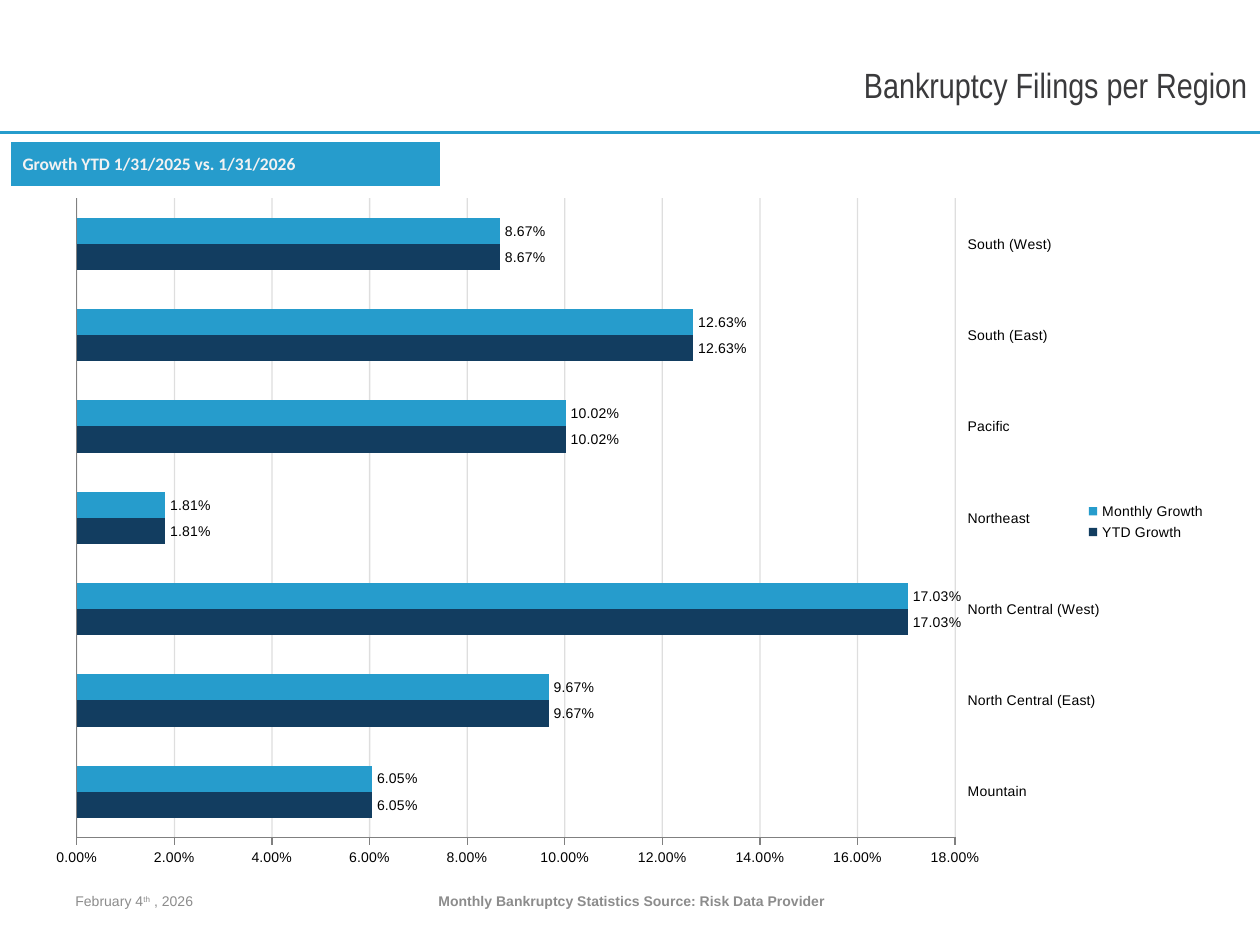
from dataclasses import dataclass

from lxml.etree import SubElement
from pptx import Presentation
from pptx.chart.data import CategoryChartData
from pptx.dml.color import RGBColor
from pptx.enum.chart import (
    XL_CHART_TYPE as ChartType,
    XL_LABEL_POSITION as LabelPos,
    XL_LEGEND_POSITION as LegendPos,
    XL_TICK_LABEL_POSITION as TickLabelPos,
    XL_TICK_MARK as TickMark,
)
from pptx.enum.shapes import MSO_CONNECTOR as Connector
from pptx.enum.text import MSO_ANCHOR as Anchor, PP_ALIGN as Align
from pptx.oxml import parse_xml
from pptx.oxml.ns import nsdecls, qn
from pptx.util import Cm, Pt

COLORS = {
    "blue": "269CCC",
    "navy": "123D60",
    "white": "FFFFFF",
    "off_white": "F2F2F2",
    "title": "3A3A3C",
    "footer": "8C8C8C",
    "axis": "808080",
    "black": "000000",
}
REGIONS = [
    "Mountain", "North Central (East)", "North Central (West)", "Northeast",
    "Pacific", "South (East)", "South (West)",
]
GROWTH = [0.0605, 0.0967, 0.1703, 0.0181, 0.1002, 0.1263, 0.0867]
PERCENT = "0.00%"


@dataclass
class Series:
    name: str
    values: list[float]
    color: str


@dataclass
class Box:
    left: float
    top: float
    width: float
    height: float

    def lengths(self) -> list[Cm]:
        return [Cm(v) for v in (self.left, self.top, self.width, self.height)]


SERIES = [
    Series("YTD Growth", GROWTH, "navy"),
    Series("Monthly Growth", GROWTH, "blue"),
]


def rgb(name: str) -> RGBColor:
    return RGBColor.from_string(COLORS[name])


def set_font(font, size: float, color: str, name: str = "Arial", bold: bool = False) -> None:
    font.size = Pt(size)
    font.name = name
    font.bold = bold
    font.color.rgb = rgb(color)


def write(p, text: str, *, size: float = 8, color: str = "footer", name: str = "Arial",
          bold: bool = False, align: Align = Align.LEFT, baseline: int = 0) -> None:
    p.alignment = align
    r = p.add_run()
    r.text = text
    set_font(r.font, size, color, name, bold)
    if baseline:
        r._r.get_or_add_rPr().set("baseline", str(baseline * 1000))


def add_box(s, box: Box):
    tf = s.shapes.add_textbox(*box.lengths()).text_frame
    tf.word_wrap = True
    tf.vertical_anchor = Anchor.MIDDLE
    return tf.paragraphs[0]


def white_fill(alpha: int):
    return parse_xml(
        f'<c:spPr {nsdecls("c", "a")}><a:solidFill><a:srgbClr val="{COLORS["white"]}">'
        f'<a:alpha val="{alpha * 1000}"/></a:srgbClr></a:solidFill>'
        "<a:ln><a:noFill/></a:ln></c:spPr>"
    )


def set_line(line, color: str, width: float) -> None:
    line.color.rgb = rgb(color)
    line.width = Pt(width)


def add_rule(s) -> None:
    rule = s.shapes.add_connector(Connector.STRAIGHT, Cm(0), Cm(2.67), Cm(25.4), Cm(2.67))
    set_line(rule.line, "blue", 1.5)
    SubElement(rule._element.spPr, qn("a:effectLst"))


def style_axes(chart) -> None:
    cat, val = chart.category_axis, chart.value_axis
    cat.major_tick_mark = TickMark.NONE
    cat.tick_label_position = TickLabelPos.HIGH
    cat.has_major_gridlines = False
    val.major_tick_mark = TickMark.OUTSIDE
    val.minimum_scale, val.maximum_scale, val.major_unit = 0, 0.18, 0.02
    val.tick_labels.number_format = PERCENT
    val.tick_labels.number_format_is_linked = False
    for axis in (cat, val):
        set_line(axis.format.line, "axis", 0.75)
    val.has_major_gridlines = True
    grid = val.major_gridlines
    set_line(grid.format.line, "axis", 0.75)
    for clr in grid._xAx.find(qn("c:majorGridlines")).iter(qn("a:srgbClr")):
        SubElement(clr, qn("a:alpha")).set("val", "25000")


def place_plot(chart) -> None:
    area = chart._chartSpace.chart.plotArea
    old = area.find(qn("c:layout"))
    if old is not None:
        area.remove(old)
    places = {"x": 0.038, "y": 0.028, "w": 0.74, "h": 0.933}
    modes = "".join(f'<c:{k}Mode val="edge"/>' for k in "xy")
    sizes = "".join(f'<c:{k} val="{v}"/>' for k, v in places.items())
    area.insert(0, parse_xml(
        f'<c:layout {nsdecls("c")}><c:manualLayout><c:layoutTarget val="inner"/>'
        f"{modes}{sizes}</c:manualLayout></c:layout>"
    ))
    area.append(white_fill(50))
    chart._chartSpace.chart.addnext(white_fill(90))


def add_growth_chart(s, box: Box) -> None:
    data = CategoryChartData(number_format=PERCENT)
    data.categories = REGIONS
    for item in SERIES:
        data.add_series(item.name, item.values)
    chart = s.shapes.add_chart(ChartType.BAR_CLUSTERED, *box.lengths(), data).chart
    set_font(chart.font, 8, "black")
    chart.has_title = False
    chart.has_legend = True
    chart.legend.position = LegendPos.RIGHT
    chart.legend.include_in_layout = False
    plot = chart.plots[0]
    plot.gap_width = 150
    plot.vary_by_categories = False
    for series, item in zip(plot.series, SERIES):
        series.format.fill.solid()
        series.format.fill.fore_color.rgb = rgb(item.color)
        labels = series.data_labels
        labels.show_value = True
        labels.number_format = PERCENT
        labels.number_format_is_linked = False
        labels.position = LabelPos.OUTSIDE_END
    style_axes(chart)
    place_plot(chart)


def add_period_table(s, box: Box) -> None:
    cell = s.shapes.add_table(1, 1, *box.lengths()).table.cell(0, 0)
    cell.fill.solid()
    cell.fill.fore_color.rgb = rgb("blue")
    cell.vertical_anchor = Anchor.MIDDLE
    cell._tc.get_or_add_tcPr().insert(0, parse_xml(
        f'<a:lnB {nsdecls("a")} w="{Pt(2)}"><a:solidFill>'
        f'<a:srgbClr val="{COLORS["white"]}"/></a:solidFill></a:lnB>'
    ))
    write(cell.text_frame.paragraphs[0], "Growth YTD 1/31/2025 vs. 1/31/2026",
          size=10, color="off_white", name="Calibri", bold=True)


def main() -> None:
    prs = Presentation()
    prs.slide_width, prs.slide_height = Cm(25.4), Cm(19.05)
    s = prs.slides.add_slide(prs.slide_layouts[6])
    add_rule(s)
    add_growth_chart(s, Box(0.64, 3.61, 23.93, 13.84))
    add_period_table(s, Box(0.2, 2.84, 8.69, 0.94))
    write(add_box(s, Box(0, 0.76, 25.4, 1.9)), "Bankruptcy Filings per Region",
          size=20, color="title", name="Arial Narrow", align=Align.RIGHT)
    write(add_box(s, Box(7.98, 17.65, 9.52, 1.02)),
          "Monthly Bankruptcy Statistics Source: Risk Data Provider",
          bold=True, align=Align.CENTER)
    p = add_box(s, Box(1.27, 17.65, 5.92, 1.02))
    for text, baseline in (("February 4", 0), ("th", 30), (" , 2026", 0)):
        write(p, text, baseline=baseline)
    prs.save("out.pptx")


if __name__ == "__main__":
    main()
